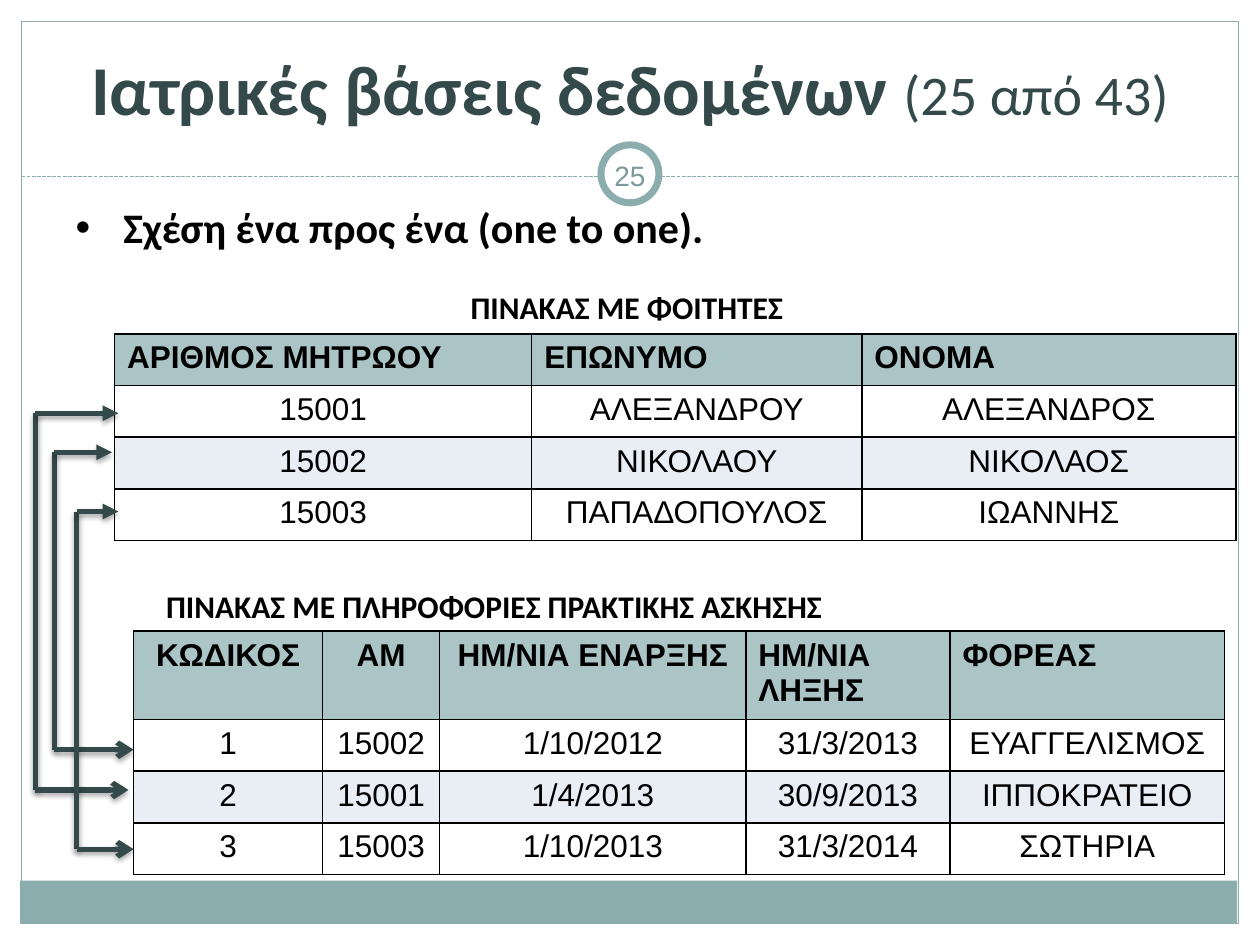
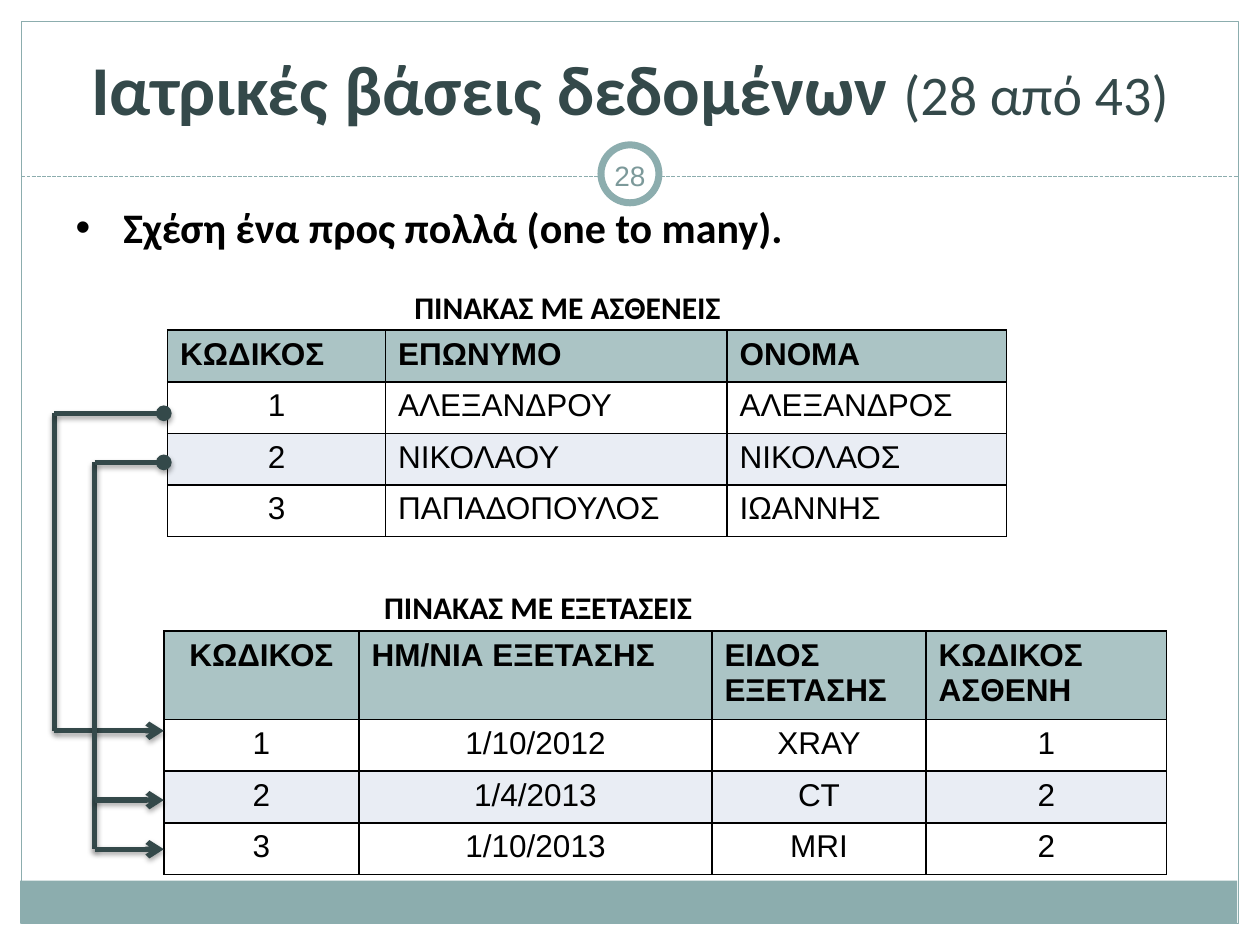
from lxml import etree
from pptx import Presentation
from pptx.dml.color import RGBColor
from pptx.enum.dml import MSO_LINE
from pptx.enum.shapes import MSO_CONNECTOR, MSO_SHAPE
from pptx.enum.text import MSO_ANCHOR, PP_ALIGN
from pptx.oxml.ns import qn
from pptx.util import Inches, Pt

RECT, OVAL = MSO_SHAPE.RECTANGLE, MSO_SHAPE.OVAL
STRAIGHT, DASH = MSO_CONNECTOR.STRAIGHT, MSO_LINE.SQUARE_DOT
MIDDLE, TOP = MSO_ANCHOR.MIDDLE, MSO_ANCHOR.TOP
ALIGN = {"l": PP_ALIGN.LEFT, "c": PP_ALIGN.CENTER}

# Shared look
WIDE, HIGH = 10, 7.5
EDGE, RULE = 0.17, 1.4
TEAL, DARK, GREY = "8CADAE", "34494A", "7C999A"
HEAD, BAND, BLACK, WHITE = "ABC4C5", "E9EDF4", "000000", "FFFFFF"
ROW, TALL = 0.41, 0.67
HEADING, TOTAL = "Ιατρικές βάσεις δεδομένων ", 43

# Content. Table: caption and its box, place, column widths, row heights of
# the header, alignment of header and body columns, rows.
# Route: x of the trunk, marker at the top, then top and lower ends (x, y).
SLIDES = [
    {
        "page": 25,
        "point": "Σχέση ένα προς ένα (one to one).",
        "tables": [
            {
                "title": "ΠΙΝΑΚΑΣ ΜΕ ΦΟΙΤΗΤΕΣ", "box": (3.62, 2.24, 2.71), "side": "c",
                "at": (0.91, 2.65), "cols": (3.31, 2.62, 2.97), "top": ROW,
                "align": ("lll", "ccc"),
                "rows": [
                    ("ΑΡΙΘΜΟΣ ΜΗΤΡΩΟΥ", "ΕΠΩΝΥΜΟ", "ΟΝΟΜΑ"),
                    ("15001", "ΑΛΕΞΑΝΔΡΟΥ", "ΑΛΕΞΑΝΔΡΟΣ"),
                    ("15002", "ΝΙΚΟΛΑΟΥ", "ΝΙΚΟΛΑΟΣ"),
                    ("15003", "ΠΑΠΑΔΟΠΟΥΛΟΣ", "ΙΩΑΝΝΗΣ"),
                ],
            },
            {
                "title": "ΠΙΝΑΚΑΣ ΜΕ ΠΛΗΡΟΦΟΡΙΕΣ ΠΡΑΚΤΙΚΗΣ ΑΣΚΗΣΗΣ",
                "box": (1.22, 4.61, 7.39), "side": "l",
                "at": (1.06, 5.01), "cols": (1.5, 0.93, 2.43, 1.62, 2.18), "top": TALL,
                "align": ("cccll", "ccccc"),
                "rows": [
                    ("ΚΩΔΙΚΟΣ", "ΑΜ", "ΗΜ/ΝΙΑ ΕΝΑΡΞΗΣ", "ΗΜ/ΝΙΑ ΛΗΞΗΣ", "ΦΟΡΕΑΣ"),
                    ("1", "15002", "1/10/2012", "31/3/2013", "ΕΥΑΓΓΕΛΙΣΜΟΣ"),
                    ("2", "15001", "1/4/2013", "30/9/2013", "ΙΠΠΟΚΡΑΤΕΙΟ"),
                    ("3", "15003", "1/10/2013", "31/3/2014", "ΣΩΤΗΡΙΑ"),
                ],
            },
        ],
        "routes": [
            (0.28, "triangle", (0.94, 3.28), [(1.02, 6.27)]),
            (0.43, "triangle", (0.89, 3.59), [(1.06, 5.95)]),
            (0.61, "triangle", (0.94, 4.06), [(1.06, 6.74)]),
        ],
    },
    {
        "page": 28,
        "point": "Σχέση ένα προς πολλά (one to many).",
        "tables": [
            {
                "title": "ΠΙΝΑΚΑΣ ΜΕ ΑΣΘΕΝΕΙΣ", "box": (3.19, 2.24, 3.52), "side": "l",
                "at": (1.33, 2.62), "cols": (1.73, 2.71, 2.22), "top": ROW,
                "align": ("lll", "cll"),
                "rows": [
                    ("ΚΩΔΙΚΟΣ", "ΕΠΩΝΥΜΟ", "ΟΝΟΜΑ"),
                    ("1", "ΑΛΕΞΑΝΔΡΟΥ", "ΑΛΕΞΑΝΔΡΟΣ"),
                    ("2", "ΝΙΚΟΛΑΟΥ", "ΝΙΚΟΛΑΟΣ"),
                    ("3", "ΠΑΠΑΔΟΠΟΥΛΟΣ", "ΙΩΑΝΝΗΣ"),
                ],
            },
            {
                "title": "ΠΙΝΑΚΑΣ ΜΕ ΕΞΕΤΑΣΕΙΣ", "box": (2.95, 4.62, 3.64), "side": "l",
                "at": (1.3, 5.01), "cols": (1.55, 2.8, 1.7, 1.91), "top": TALL,
                "align": ("clll", "cccc"),
                "rows": [
                    ("ΚΩΔΙΚΟΣ", "ΗΜ/ΝΙΑ ΕΞΕΤΑΣΗΣ", "ΕΙΔΟΣ ΕΞΕΤΑΣΗΣ", "ΚΩΔΙΚΟΣ ΑΣΘΕΝΗ"),
                    ("1", "1/10/2012", "XRAY", "1"),
                    ("2", "1/4/2013", "CT", "2"),
                    ("3", "1/10/2013", "MRI", "2"),
                ],
            },
        ],
        "routes": [
            (0.43, "oval", (1.3, 3.28), [(1.3, 5.8)]),
            (0.75, "oval", (1.3, 3.67), [(1.3, 6.35), (1.3, 6.74)]),
        ],
    },
]


def color(code):
    return RGBColor.from_string(code)


def add(parent, tag, **attrs):
    return etree.SubElement(parent, qn(tag), {k: str(v) for k, v in attrs.items()})


def place(shape, x, y, w, h):
    shape.left, shape.top = Inches(x), Inches(y)
    shape.width, shape.height = Inches(w), Inches(h)


def write(frame, text, size=18, font="Calibri", tint=BLACK, bold=False,
          side="l", anchor=TOP, more=None, bullet=None):
    """Fill a frame with one paragraph; more is a (text, size) light run."""
    frame.vertical_anchor = anchor
    par = frame.paragraphs[0]
    if bullet:
        props = par._p.get_or_add_pPr()
        props.set("marL", str(Inches(0.38)))
        props.set("indent", str(-Inches(0.38)))
        add(props, "a:buFont", typeface="Arial")
        add(props, "a:buChar", char=bullet)
    par.alignment = ALIGN[side]
    par.space_before = Pt(0)
    runs = [(text, size, bold)] + ([(*more, False)] if more else [])
    for words, points, heavy in runs:
        run = par.add_run()
        run.text = words
        run.font.name, run.font.size, run.font.bold = font, Pt(points), heavy
        run.font.color.rgb = color(tint)


def draw(slide, kind, box, fill=None, line=None, width=0.75):
    shape = slide.shapes.add_shape(kind, *map(Inches, box))
    shape.shadow.inherit = False
    if fill:
        shape.fill.solid()
        shape.fill.fore_color.rgb = color(fill)
    else:
        shape.fill.background()
    if line:
        shape.line.color.rgb = color(line)
        shape.line.width = Pt(width)
    else:
        shape.line.fill.background()


def link(slide, start, end, tint=DARK, width=3, tip=None, dash=None, shade=True):
    wire = slide.shapes.add_connector(STRAIGHT, *map(Inches, start + end))
    wire.line.color.rgb = color(tint)
    wire.line.width = Pt(width)
    if dash:
        wire.line.dash_style = dash
    props = wire._element.spPr
    if tip:
        add(props.find(qn("a:ln")), "a:tailEnd", type=tip)
    effects = add(props, "a:effectLst")
    if shade:
        cast = add(effects, "a:outerShdw", blurRad=Pt(3.1), dist=Pt(1.8),
                   dir=90 * 60000, rotWithShape=0)
        add(add(cast, "a:srgbClr", val=BLACK), "a:alpha", val=35000)


def frame(slide, page):
    """Band, border, rule and page badge."""
    inner = WIDE - 2 * EDGE
    draw(slide, RECT, (0.16, 6.99, inner, 0.34), fill=TEAL)
    draw(slide, RECT, (EDGE, EDGE, inner, HIGH - 2 * EDGE), line=TEAL)
    link(slide, (EDGE, RULE), (WIDE - EDGE, RULE), TEAL, 0.75, dash=DASH, shade=False)
    draw(slide, OVAL, (4.77, 1.15, 0.46, 0.46), WHITE, TEAL, 4)
    badge = slide.shapes.add_textbox(*map(Inches, (4.75, 1.15, 0.5, 0.48))).text_frame
    badge.margin_left = badge.margin_right = Inches(0.05)
    badge.word_wrap = True
    write(badge, str(page), 16, "Arial", GREY, side="c", anchor=MIDDLE)


def border(cell):
    props = cell._tc.get_or_add_tcPr()
    for side in "LRTB":
        line = add(props, "a:ln" + side, w=Pt(1))
        add(add(line, "a:solidFill"), "a:srgbClr", val=BLACK)


def grid(slide, data):
    rows, cols = data["rows"], data["cols"]
    tops = [data["top"]] + [ROW] * (len(rows) - 1)
    box = (*data["at"], sum(cols), sum(tops))
    table = slide.shapes.add_table(len(rows), len(cols), *map(Inches, box)).table
    table.horz_banding = False
    for col, wide in zip(table.columns, cols):
        col.width = Inches(wide)
    for r, (row, high) in enumerate(zip(rows, tops)):
        table.rows[r].height = Inches(high)
        sides = data["align"][min(r, 1)]
        for c, (text, side) in enumerate(zip(row, sides)):
            cell = table.cell(r, c)
            border(cell)
            if r % 2:
                cell.fill.background()
            else:
                cell.fill.solid()
                cell.fill.fore_color.rgb = color(BAND if r else HEAD)
            write(cell.text_frame, text, font="Arial", bold=r == 0, side=side)


def caption(slide, data):
    label = slide.shapes.add_textbox(*map(Inches, (*data["box"], 0.4))).text_frame
    label.word_wrap = False
    write(label, data["title"], bold=True, side=data["side"])


def route(slide, trunk, mark, start, ends):
    """A vertical trunk with a marked branch to each row."""
    link(slide, (trunk, start[1]), (trunk, ends[-1][1]))
    link(slide, (trunk, start[1]), start, tip=mark)
    for end in ends:
        link(slide, (trunk, end[1]), end, tip="arrow")


def build(deck, data):
    slide = deck.slides.add_slide(deck.slide_layouts[1])
    frame(slide, data["page"])
    title, body = slide.placeholders
    place(title, 0.5, 0.2, 9, 0.99)
    write(title.text_frame, HEADING, 40, tint=DARK, bold=True, side="c",
          anchor=MIDDLE, more=(f"({data['page']} από {TOTAL})", 32))
    place(body, 0.5, 1.55, 9, 5.35)
    write(body.text_frame, data["point"], 24, bold=True, bullet="•")
    for table in data["tables"]:
        grid(slide, table)
        caption(slide, table)
    for path in data["routes"]:
        route(slide, *path)


def main():
    deck = Presentation()
    deck.slide_width, deck.slide_height = Inches(WIDE), Inches(HIGH)
    for data in SLIDES:
        build(deck, data)
    deck.save("out.pptx")


if __name__ == "__main__":
    main()
